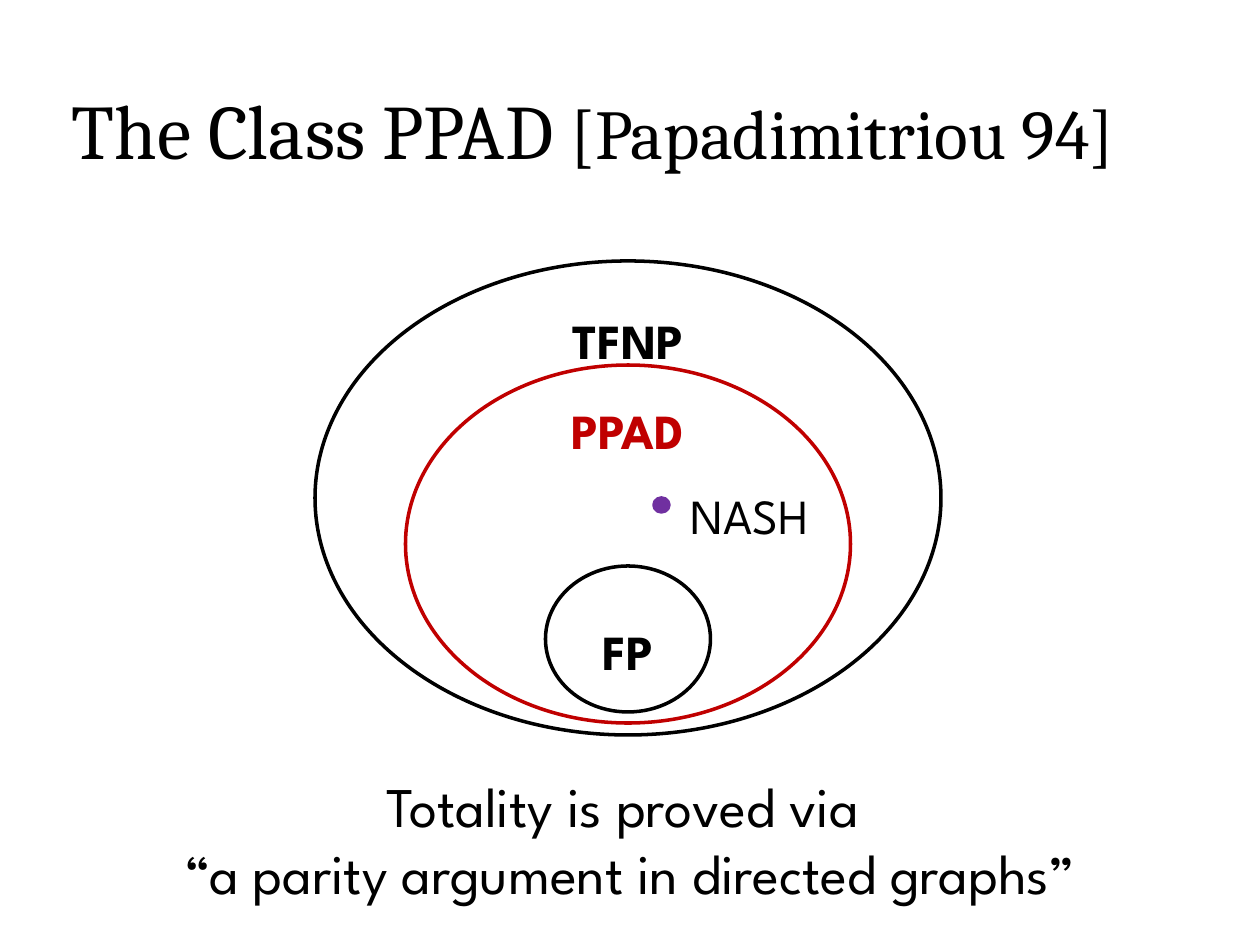
from pptx import Presentation
from pptx.dml.color import RGBColor
from pptx.enum.shapes import MSO_SHAPE as Shape
from pptx.enum.text import MSO_ANCHOR as Anchor, MSO_AUTO_SIZE as AutoSize, PP_ALIGN as Align
from pptx.util import Emu, Pt

THEME = {
    "black": "000000", "red": "C00000", "purple": "7030A0",
    "heading_font": "Cambria", "body_font": "League Spartan",
    "heading": 44, "citation": 40, "caption": 32, "label": 28, "outline": 2,
}
TITLE = [("The Class PPAD ", "heading"), ("[Papadimitriou 94]", "citation")]
CAPTION = ["Totality is proved via ", "“a parity argument in directed graphs”"]

CENTER = 628
LABEL_SIZE = (220, 91)
CLASSES = [
    {"name": "FP", "color": "black", "top": 566, "size": (165, 146), "label_top": 586},
    {"name": "TFNP", "color": "black", "top": 261, "size": (626, 474), "label_top": 275},
    {"name": "PPAD", "color": "red", "top": 365, "size": (445, 358), "label_top": 365},
]
PROBLEM = {"name": "NASH", "dot": (654, 498, 15, 14), "label": (678, 450)}


def px(*lengths):
    return [Emu(round(length * 914400 / 126)) for length in lengths]


def apply(target, **values):
    for attribute, value in values.items():
        setattr(target, attribute, value)


def add_run(paragraph, text, size, color="black", font="body_font", bold=False):
    run = paragraph.add_run()
    run.text = text
    apply(run.font, name=THEME[font], size=Pt(THEME[size]), bold=bold)
    run.font.color.rgb = RGBColor.from_string(THEME[color])


def add_lines(slide, box, lines, size, align, spacing=None, **style):
    frame = slide.shapes.add_textbox(*px(*box)).text_frame
    apply(frame, word_wrap=True, auto_size=AutoSize.NONE)
    for index, line in enumerate(lines):
        paragraph = frame.add_paragraph() if index else frame.paragraphs[0]
        apply(paragraph, alignment=align, line_spacing=spacing)
        add_run(paragraph, line, size, **style)


def add_oval(slide, box, color, filled=False):
    oval = slide.shapes.add_shape(Shape.OVAL, *px(*box))
    oval.shadow.inherit = False
    rgb = RGBColor.from_string(THEME[color])
    if filled:
        oval.fill.solid()
        oval.fill.fore_color.rgb = rgb
    else:
        oval.fill.background()
    oval.line.color.rgb = rgb
    oval.line.width = Pt(THEME["outline"])


def add_title(slide):
    title = slide.shapes.title
    apply(title, **dict(zip(("left", "top", "width", "height"), px(59, 57, 1138, 144))))
    frame = title.text_frame
    apply(frame, word_wrap=True, auto_size=AutoSize.NONE, vertical_anchor=Anchor.MIDDLE)
    heading = frame.paragraphs[0]
    heading.alignment = Align.LEFT
    for text, size in TITLE:
        add_run(heading, text, size, font="heading_font")


def main():
    deck = Presentation()
    deck.slide_width, deck.slide_height = px(1260, 945)
    slide = deck.slides.add_slide(deck.slide_layouts[5])
    add_title(slide)
    add_lines(slide, (0, 765, 1260, 149), CAPTION, "caption", Align.CENTER)

    for group in CLASSES:
        width, height = group["size"]
        add_oval(slide, (CENTER - width / 2, group["top"], width, height), group["color"])
        label_box = (CENTER - LABEL_SIZE[0] / 2, group["label_top"], *LABEL_SIZE)
        add_lines(slide, label_box, [group["name"]], "label", Align.CENTER, 1.5,
                  color=group["color"], bold=True)

    add_oval(slide, PROBLEM["dot"], "purple", filled=True)
    add_lines(slide, (*PROBLEM["label"], *LABEL_SIZE), [PROBLEM["name"]], "label", Align.LEFT, 1.5)
    deck.save("out.pptx")


if __name__ == "__main__":
    main()
